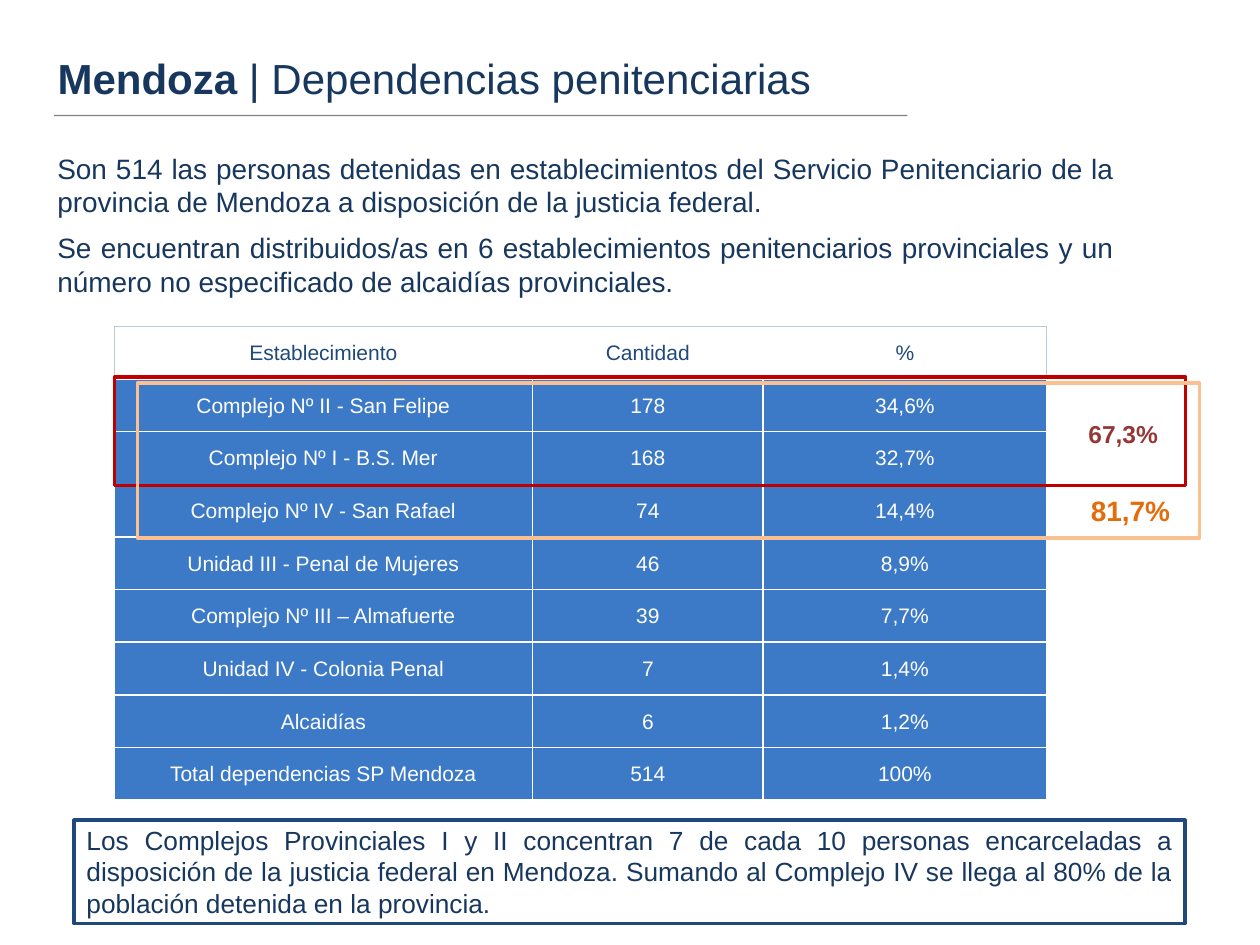
from dataclasses import dataclass

from lxml import etree
from pptx import Presentation
from pptx.dml.color import RGBColor
from pptx.enum.shapes import MSO_CONNECTOR, MSO_SHAPE
from pptx.enum.text import MSO_ANCHOR, PP_ALIGN
from pptx.oxml.ns import qn
from pptx.util import Pt

RECTANGLE = MSO_SHAPE.RECTANGLE
STRAIGHT = MSO_CONNECTOR.STRAIGHT
TOP, MIDDLE = MSO_ANCHOR.TOP, MSO_ANCHOR.MIDDLE
LEFT, CENTER, JUSTIFY = PP_ALIGN.LEFT, PP_ALIGN.CENTER, PP_ALIGN.JUSTIFY


@dataclass(frozen=True)
class Theme:
    font: str = "Arial"
    navy: str = "17375E"
    blue: str = "1F497D"
    row_fill: str = "3C7AC7"
    white: str = "FFFFFF"
    header_edge: str = "BDC8DD"
    rule: str = "000000"
    red: str = "C00000"
    dark_red: str = "953735"
    peach: str = "FAC090"
    orange: str = "E46C0A"
    title_size: float = 24
    body_size: float = 16
    callout_size: float = 15
    table_size: float = 12
    small_share_size: float = 14
    large_share_size: float = 16


THEME = Theme()
TITLE = ("Mendoza ", "| Dependencias penitenciarias")
INTRO = [
    "Son 514 las personas detenidas en establecimientos del Servicio Penitenciario de la "
    "provincia de Mendoza a disposición de la justicia federal.",
    "Se encuentran distribuidos/as en 6 establecimientos penitenciarios provinciales y un "
    "número no especificado de alcaidías provinciales.",
]
ROWS = [
    ("Establecimiento", "Cantidad", "%"),
    ("Complejo Nº II - San Felipe", "178", "34,6%"),
    ("Complejo Nº I - B.S. Mer", "168", "32,7%"),
    ("Complejo Nº IV - San Rafael", "74", "14,4%"),
    ("Unidad III - Penal de Mujeres", "46", "8,9%"),
    ("Complejo Nº III – Almafuerte", "39", "7,7%"),
    ("Unidad IV - Colonia Penal", "7", "1,4%"),
    ("Alcaidías", "6", "1,2%"),
    ("Total dependencias SP Mendoza", "514", "100%"),
]
CALLOUT = (
    "Los Complejos Provinciales I y II concentran 7 de cada 10 personas encarceladas a "
    "disposición de la justicia federal en Mendoza. Sumando al Complejo IV se llega al 80% de la "
    "población detenida en la provincia."
)
HIGHLIGHTS = [
    ((65.5, 215.5, 612, 61.9), THEME.red,
     "67,3%", (614.9, 236, 54.7, 24.5), THEME.dark_red, THEME.small_share_size),
    ((78.5, 218.9, 607, 88.6), THEME.peach,
     "81,7%", (616.3, 278.6, 60.5, 26.6), THEME.orange, THEME.large_share_size),
]
TABLE_BOX = (65.3, 186.5, 532.8, 270.7)
COLUMN_WIDTHS = (239, 131.8, 162)


def rgb(code):
    return RGBColor.from_string(code)


def place(box):
    return [Pt(length) for length in box]


def style(paragraph, size, color, align=LEFT, bold=None):
    paragraph.alignment = align
    font = paragraph.font
    font.name, font.size, font.bold = THEME.font, Pt(size), bold
    font.color.rgb = rgb(color)


def add_text(slide, box, texts, size, color, align=LEFT, bold=None, wrap=True):
    frame = slide.shapes.add_textbox(*place(box)).text_frame
    frame.word_wrap = wrap
    frame.text = "\n".join(texts)
    for paragraph in frame.paragraphs:
        style(paragraph, size, color, align, bold)
    return frame


def add_outline(slide, box, color):
    outline = slide.shapes.add_shape(RECTANGLE, *place(box))
    outline.shadow.inherit = False
    outline.fill.background()
    outline.line.color.rgb = rgb(color)
    outline.line.width = Pt(2)
    return outline


def add_title(slide):
    title = slide.shapes.title
    title.left, title.top, title.width, title.height = place((25.7, 26.6, 533, 44.6))
    frame = title.text_frame
    frame.vertical_anchor = TOP
    paragraph = frame.paragraphs[0]
    style(paragraph, THEME.title_size, THEME.navy)
    for text, bold in zip(TITLE, (True, False)):
        run = paragraph.add_run()
        run.text, run.font.bold = text, bold
    rule = slide.shapes.add_connector(STRAIGHT, *place((31, 66, 518.5, 66)))
    rule.line.width = Pt(0.75)
    rule.line.color.rgb = rgb(THEME.rule)
    color = next(rule._element.spPr.iter(qn("a:srgbClr")))
    etree.SubElement(color, qn("a:alpha"), val="50000")
    etree.SubElement(rule._element.spPr, qn("a:effectLst"))


def set_borders(cell, colors):
    properties = cell._tc.get_or_add_tcPr()
    for side, color in colors.items():
        width = Pt(1 if color == THEME.white else 0.75)
        edge = etree.SubElement(properties, qn(f"a:ln{side}"), w=str(width))
        if color is None:
            etree.SubElement(edge, qn("a:noFill"))
        else:
            fill = etree.SubElement(edge, qn("a:solidFill"))
            etree.SubElement(fill, qn("a:srgbClr"), val=color)


def border_colors(header, column):
    if not header:
        return dict.fromkeys("LRTB", THEME.white)
    return {
        "L": THEME.header_edge if column == 0 else None,
        "R": THEME.header_edge if column == len(COLUMN_WIDTHS) - 1 else None,
        "T": THEME.header_edge,
        "B": THEME.white,
    }


def add_prison_table(slide):
    table = slide.shapes.add_table(len(ROWS), len(COLUMN_WIDTHS), *place(TABLE_BOX)).table
    for column, width in zip(table.columns, COLUMN_WIDTHS):
        column.width = Pt(width)
    for r, values in enumerate(ROWS):
        table.rows[r].height = Pt(TABLE_BOX[3] / len(ROWS))
        header = r == 0
        for c, value in enumerate(values):
            cell = table.cell(r, c)
            set_borders(cell, border_colors(header, c))
            cell.fill.solid()
            cell.fill.fore_color.rgb = rgb(THEME.white if header else THEME.row_fill)
            cell.vertical_anchor = MIDDLE
            cell.margin_left = cell.margin_right = cell.margin_top = Pt(0.72)
            cell.margin_bottom = 0
            cell.text = value
            color = THEME.blue if header else THEME.white
            style(cell.text_frame.paragraphs[0], THEME.table_size, color, CENTER, False)


def add_callout(slide):
    frame = add_outline(slide, (42.3, 468.7, 635, 59), THEME.blue).text_frame
    frame.word_wrap = True
    frame.vertical_anchor = TOP
    frame.margin_top = frame.margin_bottom = Pt(2)
    frame.text = CALLOUT
    style(frame.paragraphs[0], THEME.callout_size, THEME.navy, JUSTIFY)


def main():
    """Build the slide on Mendoza's prison facilities."""
    deck = Presentation()
    deck.slide_width, deck.slide_height = Pt(720), Pt(540)
    slide = deck.slides.add_slide(deck.slide_layouts[5])
    add_title(slide)
    intro = add_text(slide, (25.7, 82.8, 617.8, 73.4), INTRO, THEME.body_size, THEME.navy, JUSTIFY)
    intro.paragraphs[0].space_after = Pt(7)
    add_prison_table(slide)
    for box, edge, share, share_box, color, size in HIGHLIGHTS:
        add_outline(slide, box, edge)
        add_text(slide, share_box, [share], size, color, bold=True, wrap=False)
    add_callout(slide)
    deck.save("out.pptx")


if __name__ == "__main__":
    main()
